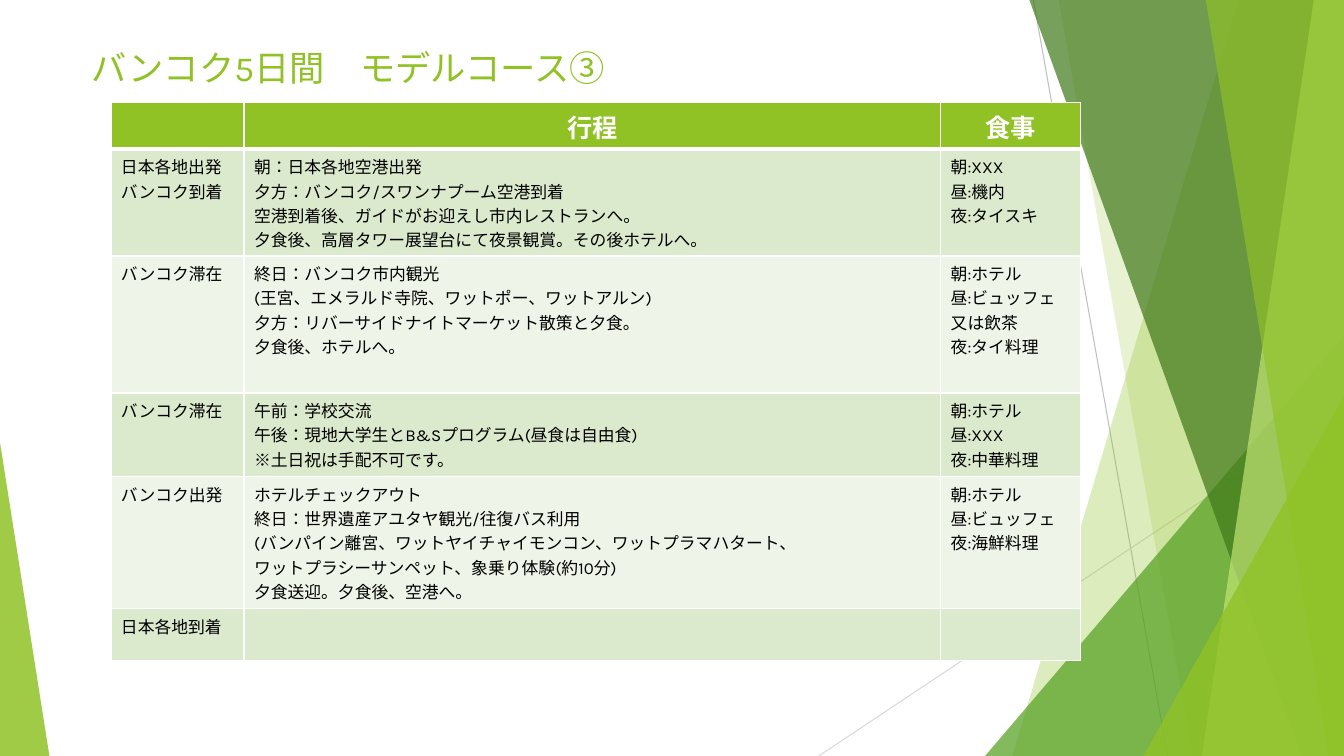
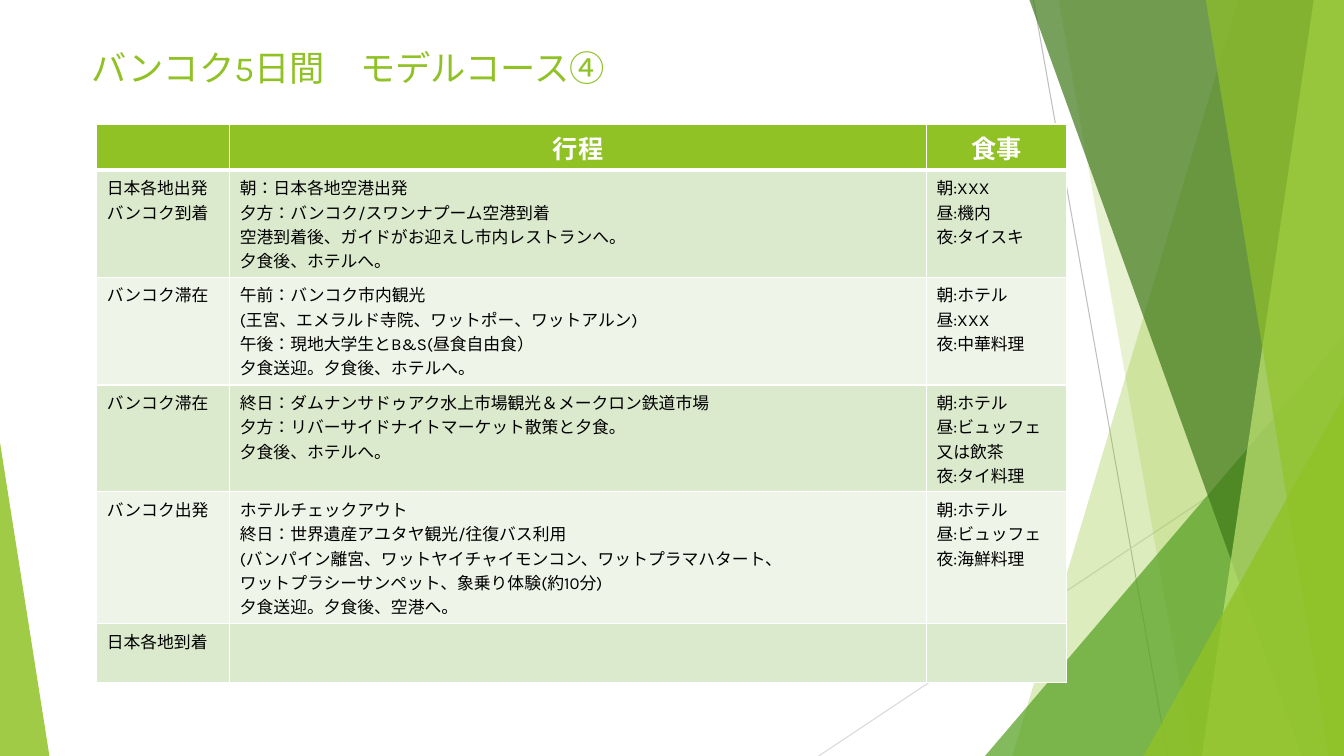
from lxml.etree import SubElement
from pptx import Presentation
from pptx.dml.color import RGBColor
from pptx.enum.lang import MSO_LANGUAGE_ID
from pptx.enum.shapes import MSO_CONNECTOR, MSO_SHAPE
from pptx.enum.text import MSO_ANCHOR, PP_ALIGN
from pptx.oxml.ns import qn
from pptx.util import Inches, Pt

SLIDE_WIDTH, SLIDE_HEIGHT = 13.33, 7.5
FONT = "Karla"
GREEN, WHITE, BLACK = "90C226", "FFFFFF", "000000"
BANDS = ("DBE9CD", "EEF4E8")

TITLE_STYLE = {"size": Pt(25.2), "bold": False}
HEADER_STYLE = {"size": Pt(18), "bold": True}
BODY_STYLE = {"size": Pt(12), "bold": False}

# Start, end, colour
RAYS = [((10.25, 0), (11.58, 7.5), "BFBFBF"), ((13.33, 4.03), (8.12, 7.5), "D9D9D9")]

# Back to front. panel: left edge at top and at bottom; wedge: left, top, width, apex.
FACETS = [
    ("panel", (12.28, 10.04), GREEN, 30),
    ("panel", (10.5, 11.83), GREEN, 20),
    ("wedge", (9.77, 3.33, 3.56, 1), "54A021", 72),
    ("panel", (10.21, 12.91), "3F7819", 70),
    ("panel", (13.03, 11.92), "C0E474", 70),
    ("panel", (11.96, 13.18), GREEN, 65),
    ("wedge", (11.34, 3.93, 1.99, 1), GREEN, 80),
    ("wedge", (0, 4.39, 0.49, 0), GREEN, 85),
]

COLUMN_WIDTHS = (1.32, 6.91, 1.39)
HEADER = ([], ["行程"], ["食事"])
HEADER_HEIGHT = 0.46

FLIGHT_OUT = ["日本各地出発", "バンコク到着"]
ARRIVAL = ["朝：日本各地空港出発", "夕方：バンコク/スワンナプーム空港到着",
           "空港到着後、ガイドがお迎えし市内レストランへ。"]
ARRIVAL_MEALS = ["朝:XXX", "昼:機内", "夜:タイスキ"]
STAY = ["バンコク滞在"]
TEMPLES = "(王宮、エメラルド寺院、ワットポー、ワットアルン)"
NIGHT_MARKET = ["夕方：リバーサイドナイトマーケット散策と夕食。", "夕食後、ホテルへ。"]
BUFFET_MEALS = ["朝:ホテル", "昼:ビュッフェ", "又は飲茶", "夜:タイ料理"]
CHINESE_MEALS = ["朝:ホテル", "昼:XXX", "夜:中華料理"]
DEPARTURE = (
    ["バンコク出発"],
    ["ホテルチェックアウト", "終日：世界遺産アユタヤ観光/往復バス利用",
     "(バンパイン離宮、ワットヤイチャイモンコン、ワットプラマハタート、",
     "ワットプラシーサンペット、象乗り体験(約10分)", "夕食送迎。夕食後、空港へ。"],
    ["朝:ホテル", "昼:ビュッフェ", "夜:海鮮料理"],
)
RETURN = (["日本各地到着"], [], [])

COURSES = [
    {
        "title": "バンコク5日間　モデルコース③",
        "position": (1.1, 1.02),
        "heights": (1.06, 1.36, 0.83, 1.31, 0.51),
        "days": [
            (FLIGHT_OUT, ARRIVAL + ["夕食後、高層タワー展望台にて夜景観賞。その後ホテルへ。"],
             ARRIVAL_MEALS),
            (STAY, ["終日：バンコク市内観光", TEMPLES] + NIGHT_MARKET, BUFFET_MEALS),
            (STAY, ["午前：学校交流", "午後：現地大学生とB&Sプログラム(昼食は自由食)",
                    "※土日祝は手配不可です。"], CHINESE_MEALS),
            DEPARTURE,
            RETURN,
        ],
    },
    {
        "title": "バンコク5日間　モデルコース④",
        "position": (0.96, 1.23),
        "heights": (1.06, 1.07, 1.06, 1.31, 0.58),
        "days": [
            (FLIGHT_OUT, ARRIVAL + ["夕食後、ホテルへ。"], ARRIVAL_MEALS),
            (STAY, ["午前：バンコク市内観光", TEMPLES, "午後：現地大学生とB&S(昼食自由食）",
                    "夕食送迎。夕食後、ホテルへ。"], CHINESE_MEALS),
            (STAY, ["終日：ダムナンサドゥアク水上市場観光＆メークロン鉄道市場"] + NIGHT_MARKET,
             BUFFET_MEALS),
            DEPARTURE,
            RETURN,
        ],
    },
]


def rgb(color):
    return RGBColor.from_string(color)


def write_text(frame, lines, style, color, alignment=PP_ALIGN.LEFT):
    frame.text = "\n".join(lines)
    for paragraph in frame.paragraphs:
        paragraph.alignment = alignment
        for run in paragraph.runs:
            run.font.color.rgb = rgb(color)
            run.font.name = FONT
            run.font.language_id = MSO_LANGUAGE_ID.JAPANESE
            for name, value in style.items():
                setattr(run.font, name, value)


def add_ray(slide, start, end, color):
    ray = slide.shapes.add_connector(
        MSO_CONNECTOR.STRAIGHT, *(Inches(value) for value in start + end))
    ray.line.color.rgb = rgb(color)
    ray.line.width = Pt(0.75)
    SubElement(ray._element.spPr, qn("a:effectLst"))


def add_panel(slide, top_x, bottom_x):
    """Add a sloped panel that reaches from its left edge to the slide's right side."""
    builder = slide.shapes.build_freeform(Inches(top_x), 0)
    corners = [(SLIDE_WIDTH, 0), (SLIDE_WIDTH, SLIDE_HEIGHT), (bottom_x, SLIDE_HEIGHT)]
    builder.add_line_segments([(Inches(x), Inches(y)) for x, y in corners], close=True)
    return builder.convert_to_shape()


def add_wedge(slide, left, top, width, apex):
    """Add a triangle that stands on the slide's bottom side."""
    wedge = slide.shapes.add_shape(
        MSO_SHAPE.ISOSCELES_TRIANGLE, Inches(left), Inches(top),
        Inches(width), Inches(SLIDE_HEIGHT - top))
    wedge.adjustments[0] = apex
    return wedge


def add_background(slide):
    for ray in RAYS:
        add_ray(slide, *ray)
    builders = {"panel": add_panel, "wedge": add_wedge}
    for kind, geometry, color, opacity in FACETS:
        shape = builders[kind](slide, *geometry)
        shape.shadow.inherit = False
        shape.line.fill.background()
        shape.fill.solid()
        shape.fill.fore_color.rgb = rgb(color)
        color_element = shape._element.spPr.find(qn("a:solidFill"))[0]
        SubElement(color_element, qn("a:alpha"), val=str(opacity * 1000))


def add_title(slide, title):
    box = slide.shapes.add_textbox(Inches(0.81), Inches(0.41), Inches(5.69), Inches(0.6))
    box.text_frame.word_wrap = True
    box.text_frame.vertical_anchor = MSO_ANCHOR.TOP
    write_text(box.text_frame, [title], TITLE_STYLE, GREEN)


def format_cell(cell, color, top=1, bottom=1):
    """Give a cell its fill and white borders; top and bottom are in points."""
    properties = cell._tc.get_or_add_tcPr()
    for side, width in {"L": 1, "R": 1, "T": top, "B": bottom}.items():
        border = SubElement(properties, qn(f"a:ln{side}"), w=str(Pt(width)))
        SubElement(SubElement(border, qn("a:solidFill")), qn("a:srgbClr"), val=WHITE)
    cell.fill.solid()
    cell.fill.fore_color.rgb = rgb(color)


def add_itinerary(slide, position, heights, days):
    rows = [HEADER] + days
    row_heights = (HEADER_HEIGHT,) + heights
    left, top = position
    table = slide.shapes.add_table(
        len(rows), len(COLUMN_WIDTHS), Inches(left), Inches(top),
        Inches(sum(COLUMN_WIDTHS)), Inches(sum(row_heights))).table
    table.horz_banding = False
    for column, width in zip(table.columns, COLUMN_WIDTHS):
        column.width = Inches(width)
    for index, (row, height, texts) in enumerate(zip(table.rows, row_heights, rows)):
        row.height = Inches(height)
        for cell, lines in zip(row.cells, texts):
            if index == 0:
                format_cell(cell, GREEN, bottom=3)
                write_text(cell.text_frame, lines, HEADER_STYLE, WHITE, PP_ALIGN.CENTER)
            else:
                format_cell(cell, BANDS[(index - 1) % 2], top=3 if index == 1 else 1)
                write_text(cell.text_frame, lines, BODY_STYLE, BLACK)


def main():
    presentation = Presentation()
    presentation.slide_width = Inches(SLIDE_WIDTH)
    presentation.slide_height = Inches(SLIDE_HEIGHT)
    for course in COURSES:
        slide = presentation.slides.add_slide(presentation.slide_layouts[6])
        add_background(slide)
        add_title(slide, course["title"])
        add_itinerary(slide, course["position"], course["heights"], course["days"])
    presentation.save("out.pptx")


if __name__ == "__main__":
    main()
